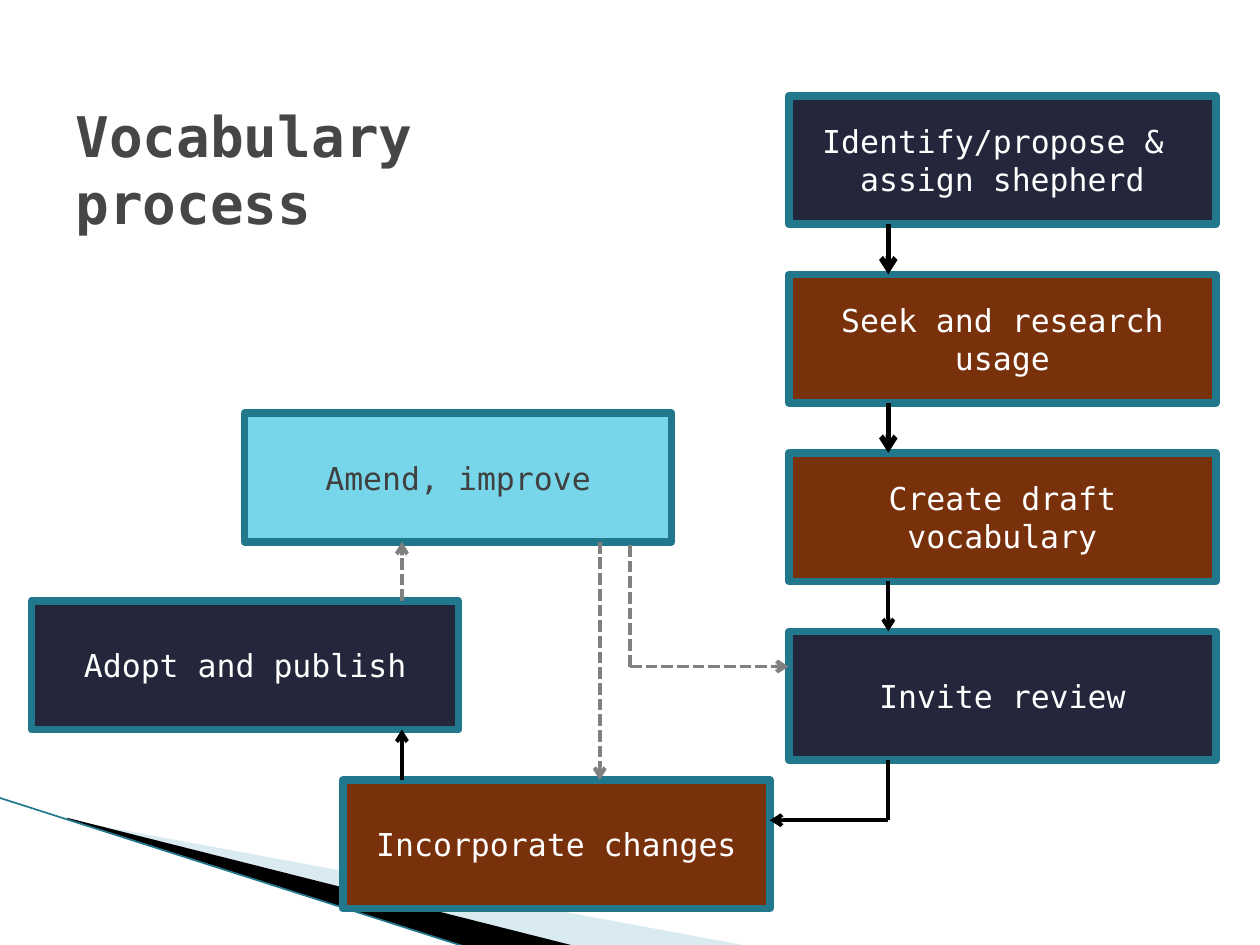
from dataclasses import dataclass
from typing import Any, Optional

from pptx import Presentation
from pptx import util as u
from pptx.dml import color
from pptx.enum import dml, shapes, text
from pptx.oxml import ns, xmlchemy as xml

COLS, ROWS = 100, 75
WIDE, HIGH = u.Inches(10), u.Inches(7.5)
FONT = "DejaVu Sans Mono"
HUES = {
    "navy": "24263C", "rust": "78310B", "aqua": "78D6EA", "teal": "21788D",
    "white": "FFFFFF", "dark": "404040", "title": "464646",
    "black": "000000", "grey": "808080", "pale": "A0CBDC",
}
BOX_W, BOX_H = 33.9, 10.2
RIGHT, TOP, STEP = 62.6, 7.6, 14.17
SPINE, RISE, DROP, BEND = 70.5, 31.9, 47.6, 50
REVIEW = TOP + 3 * STEP
AMEND, ADOPT, MERGE = 32.8, 47.7, 61.9
TURN, ENTRY = 65.1, 52.9


@dataclass
class Step:
    label: str
    col: float
    row: float
    fill: str
    ink: str = "white"


@dataclass
class Link:
    start: tuple[float, float]
    end: tuple[float, float]
    hue: str = "black"
    width: float = 2.25
    dash: bool = False
    arrow: bool = True


@dataclass
class Wedge:
    points: list[tuple[float, float]]
    fill: str
    alpha: Optional[int] = None


WEDGES = [
    Wedge([(5.5, 65.1), (59.5, 75.1), (45.6, 75.1), (5.5, 65)], "pale", 40),
    Wedge([(5.3, 64.9), (45.7, 75.1), (37.2, 75.2), (5.4, 65)], "black"),
]
CHAIN = [
    ("Identify/propose & \nassign shepherd", "navy"),
    ("Seek and research usage", "rust"),
    ("Create draft vocabulary", "rust"),
    ("Invite review", "navy"),
]
STEPS = [
    Step(label, RIGHT, TOP + i * STEP, fill)
    for i, (label, fill) in enumerate(CHAIN)
] + [
    Step("Incorporate changes", 27.2, MERGE, "rust"),
    Step("Adopt and publish", 2.5, ADOPT, "navy"),
    Step("Amend, improve", 19.4, AMEND, "aqua", "dark"),
]
LINKS = [
    Link((SPINE, TOP + i * STEP + BOX_H), (SPINE, TOP + (i + 1) * STEP), width=width)
    for i, width in enumerate((3, 3, 2.25))
] + [
    Link((SPINE, TURN), (27.2 + BOX_W, TURN)),
    Link((SPINE, TURN), (SPINE, REVIEW + BOX_H), arrow=False),
    Link((RISE, MERGE), (RISE, ADOPT + BOX_H)),
    Link((RISE, ADOPT), (RISE, AMEND + BOX_H), "grey", dash=True),
    Link((DROP, AMEND + BOX_H), (DROP, MERGE), "grey", dash=True),
    Link((BEND, ENTRY), (RIGHT, ENTRY), "grey", dash=True),
    Link((BEND, ENTRY), (BEND, AMEND + BOX_H), "grey", dash=True, arrow=False),
]


def across(cols: float) -> int:
    return round(WIDE * cols / COLS)


def down(rows: float) -> int:
    return round(HIGH * rows / ROWS)


def shade(name: str) -> color.RGBColor:
    return color.RGBColor.from_string(HUES[name])


def put(item: Any, **values: Any) -> None:
    for name, value in values.items():
        setattr(item, name, value)


def paint(fill: Any, hue: str) -> None:
    fill.solid()
    fill.fore_color.rgb = shade(hue)


def add(parent: Any, tag: str, **values: str) -> None:
    node = xml.OxmlElement(tag)
    for name, value in values.items():
        node.set(name, value)
    parent.append(node)


def write(frame: Any, words: str, align: Any, ink: str, size: int, bold: bool) -> None:
    put(frame, text=words, word_wrap=True, vertical_anchor=text.MSO_ANCHOR.MIDDLE)
    for para in frame.paragraphs:
        para.alignment = align
        for run in para.runs:
            put(run.font, name=FONT, size=u.Pt(size), bold=bold)
            run.font.color.rgb = shade(ink)


def draw_wedge(slide: Any, wedge: Wedge) -> None:
    points = [(across(x), down(y)) for x, y in wedge.points]
    pen = slide.shapes.build_freeform(*points[0])
    pen.add_line_segments(points[1:], close=True)
    shape = pen.convert_to_shape()
    shape.shadow.inherit = False
    paint(shape.fill, wedge.fill)
    shape.line.fill.background()
    if wedge.alpha is not None:
        tint = shape.fill._xPr.find(".//" + ns.qn("a:srgbClr"))
        add(tint, "a:alpha", val=str(wedge.alpha * 1000))


def draw_step(slide: Any, step: Step) -> None:
    shape = slide.shapes.add_shape(
        shapes.MSO_SHAPE.RECTANGLE,
        across(step.col), down(step.row), across(BOX_W), down(BOX_H),
    )
    shape.shadow.inherit = False
    paint(shape.fill, step.fill)
    paint(shape.line.fill, "teal")
    shape.line.width = u.Pt(4.33)
    write(shape.text_frame, step.label, text.PP_ALIGN.CENTER, step.ink, 18, False)


def draw_link(slide: Any, link: Link) -> None:
    (x, y), (right, low) = link.start, link.end
    wire = slide.shapes.add_connector(
        shapes.MSO_CONNECTOR.STRAIGHT, across(x), down(y), across(right), down(low)
    )
    paint(wire.line.fill, link.hue)
    wire.line.width = u.Pt(link.width)
    if link.dash:
        wire.line.dash_style = dml.MSO_LINE.SQUARE_DOT
    props = wire._element.spPr
    if link.arrow:
        add(props.find(ns.qn("a:ln")), "a:tailEnd", type="arrow")
    add(props, "a:effectLst")


def draw_title(slide: Any) -> None:
    box = slide.shapes.add_textbox(across(5), down(7.1), across(48.3), down(12.5))
    write(box.text_frame, "Vocabulary process", text.PP_ALIGN.LEFT, "title", 32, True)


def main() -> None:
    deck = Presentation()
    put(deck, slide_width=WIDE, slide_height=HIGH)
    slide = deck.slides.add_slide(deck.slide_layouts[6])
    paint(slide.background.fill, "white")
    for wedge in WEDGES:
        draw_wedge(slide, wedge)
    draw_link(slide, Link((-0.1, 63.3), (37.1, 75.2), "teal", 0.95, arrow=False))
    for step in STEPS:
        draw_step(slide, step)
    for link in LINKS:
        draw_link(slide, link)
    draw_title(slide)
    deck.save("out.pptx")


if __name__ == "__main__":
    main()
